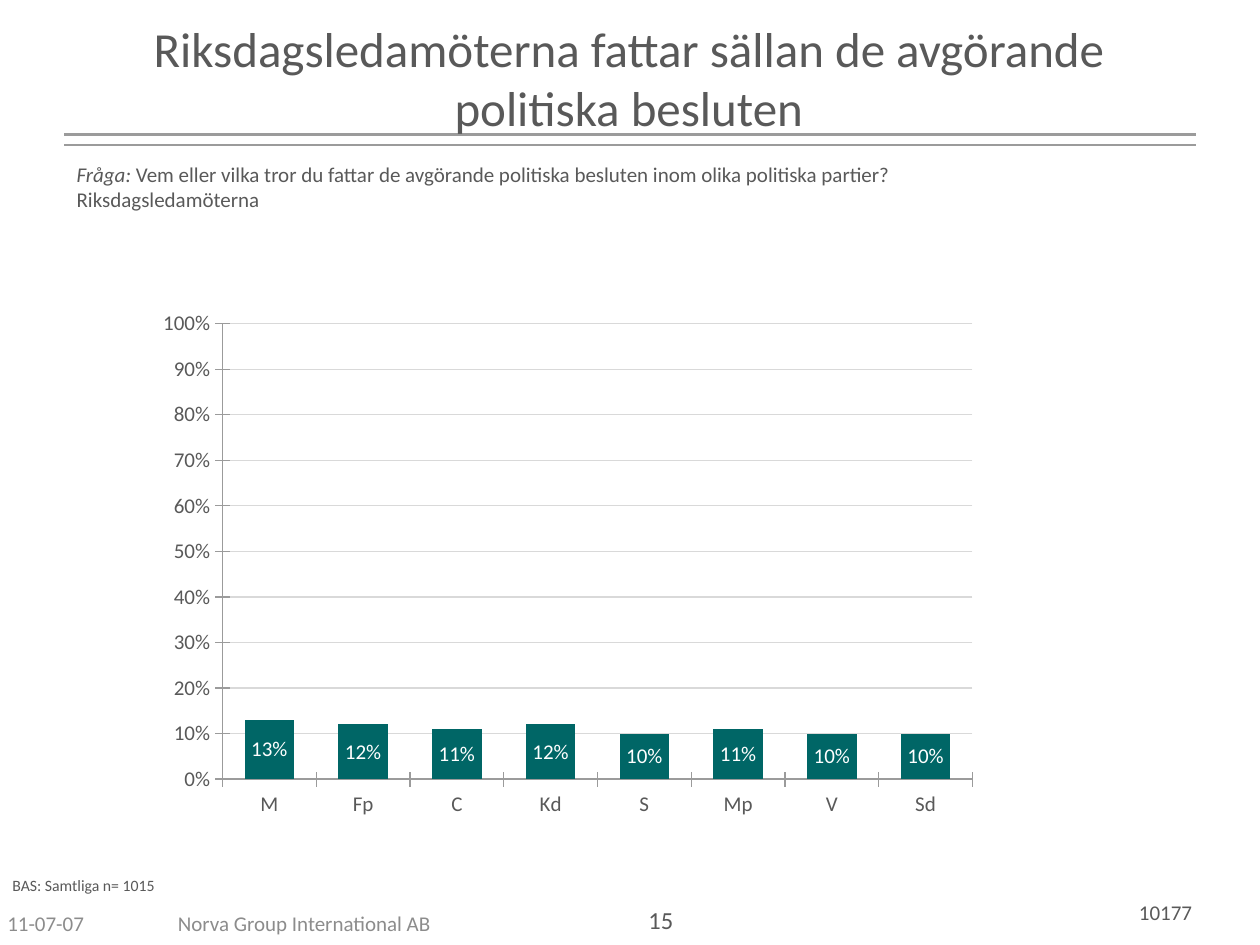
from lxml import etree
from pptx import Presentation
from pptx.chart.data import CategoryChartData
from pptx.dml.color import RGBColor
from pptx.enum.chart import XL_CHART_TYPE, XL_LABEL_POSITION, XL_TICK_MARK
from pptx.enum.shapes import MSO_CONNECTOR
from pptx.enum.text import MSO_ANCHOR, PP_ALIGN
from pptx.oxml.ns import qn
from pptx.util import Inches, Pt

STACKED = XL_CHART_TYPE.COLUMN_STACKED
LABEL_CENTER = XL_LABEL_POSITION.CENTER
TICK_CROSS = XL_TICK_MARK.CROSS
STRAIGHT = MSO_CONNECTOR.STRAIGHT
TOP, MIDDLE = MSO_ANCHOR.TOP, MSO_ANCHOR.MIDDLE
LEFT, CENTER, RIGHT = PP_ALIGN.LEFT, PP_ALIGN.CENTER, PP_ALIGN.RIGHT

FONT = "Calibri"
COLORS = {
    "text": "595959",
    "footer": "8C8C8C",
    "rule": "9B9B9B",
    "grid": "D9D9D9",
    "bar": "006666",
    "label": "FFFFFF",
}
PARTIES = ["M", "Fp", "C", "Kd", "S", "Mp", "V", "Sd"]
SHARES = [0.13, 0.12, 0.11, 0.12, 0.1, 0.11, 0.1, 0.1]
PLOT_LAYOUT = {"x": 0.071, "y": 0.143, "w": 0.774, "h": 0.729}


def rgb(name):
    return RGBColor.from_string(COLORS[name])


def style_font(font, size, color="text"):
    font.name = FONT
    font.size = Pt(size)
    font.color.rgb = rgb(color)


def add_text(slide, box, paragraphs, size, color="text", align=LEFT, anchor=TOP):
    tf = slide.shapes.add_textbox(*map(Inches, box)).text_frame
    tf.word_wrap = True
    tf.vertical_anchor = anchor
    for i, runs in enumerate(paragraphs):
        p = tf.add_paragraph() if i else tf.paragraphs[0]
        p.alignment = align
        for text, italic in runs:
            r = p.add_run()
            r.text = text
            style_font(r.font, size, color)
            r.font.italic = italic


def add_double_rule(slide, box):
    left, top, width, height = box
    for y in (top, top + height):
        line = slide.shapes.add_connector(
            STRAIGHT, Inches(left), Inches(y), Inches(left + width), Inches(y))
        line.line.color.rgb = rgb("rule")
        line.line.width = Pt(1.5)
        etree.SubElement(line._element.spPr, qn("a:effectLst"))


def add_header(slide, box):
    left, top, width, height = box
    title = "Riksdagsledamöterna fattar sällan de avgörande politiska besluten"
    add_text(slide, (left, top, width, 1.25), [[(title, False)]], 28, align=CENTER)
    question = [
        [("Fråga: ", True),
         ("Vem eller vilka tror du fattar de avgörande politiska besluten "
          "inom olika politiska partier?", False)],
        [("Riksdagsledamöterna", False)],
    ]
    add_text(slide, (left + 0.02, top + height - 0.5, width - 0.02, 0.5), question, 12)


def set_plot_layout(chart):
    plot_area = chart._chartSpace.chart.plotArea
    for old in plot_area.findall(qn("c:layout")):
        plot_area.remove(old)
    layout = etree.Element(qn("c:layout"))
    manual = etree.SubElement(layout, qn("c:manualLayout"))
    settings = {"layoutTarget": "inner", "xMode": "edge", "yMode": "edge", **PLOT_LAYOUT}
    for tag, value in settings.items():
        etree.SubElement(manual, qn(f"c:{tag}")).set("val", str(value))
    plot_area.insert(0, layout)


def add_party_chart(slide, box):
    data = CategoryChartData(number_format="0%")
    data.categories = PARTIES
    data.add_series("Series 1", SHARES)
    chart = slide.shapes.add_chart(STACKED, *map(Inches, box), data).chart
    chart.has_title = False
    chart.has_legend = False
    style_font(chart.font, 18)
    set_plot_layout(chart)

    for axis in (chart.category_axis, chart.value_axis):
        axis.major_tick_mark = TICK_CROSS
        style_font(axis.tick_labels.font, 12)
        axis.format.line.color.rgb = rgb("rule")
    axis = chart.value_axis
    axis.minimum_scale, axis.maximum_scale, axis.major_unit = 0, 1, 0.1
    axis.tick_labels.number_format = "0%"
    axis.tick_labels.number_format_is_linked = False
    axis.major_gridlines.format.line.color.rgb = rgb("grid")
    axis.major_gridlines.format.line.width = Pt(0.75)

    plot = chart.plots[0]
    plot.gap_width, plot.overlap = 89, 100
    plot.vary_by_categories = False
    series = plot.series[0]
    series.format.fill.solid()
    series.format.fill.fore_color.rgb = rgb("bar")
    labels = series.data_labels
    labels.show_value = True
    labels.position = LABEL_CENTER
    labels.number_format = "0%"
    labels.number_format_is_linked = False
    style_font(labels.font, 12, "label")


def add_footer(slide, box):
    left, top, width, height = box
    row = top + 0.23
    right = left + width
    items = [
        ((left, top, 3.39, 0.25), "BAS: Samtliga n= 1015", 9, "text", LEFT, TOP),
        ((left - 0.04, row, 2.33, 0.4), "11-07-07", 12, "footer", LEFT, MIDDLE),
        ((left + 0.83, row, 3.17, 0.4), "Norva Group International AB",
         12, "footer", CENTER, MIDDLE),
        ((left + 4.08, row, 2.33, 0.4), "15", 14, "text", CENTER, TOP),
        ((right - 3.04, row - 0.04, 2.6, 0.3), "10177", 12, "text", RIGHT, TOP),
    ]
    for area, text, size, color, align, anchor in items:
        add_text(slide, area, [[(text, False)]], size, color, align, anchor)


def main():
    prs = Presentation()
    prs.slide_width, prs.slide_height = Inches(10), Inches(7.5)
    slide = prs.slides.add_slide(prs.slide_layouts[6])
    add_double_rule(slide, (0.51, 1.07, 8.98, 0.08))
    add_party_chart(slide, (1.22, 1.86, 7.69, 4.96))
    add_header(slide, (0.49, 0.1, 9, 1.63))
    add_footer(slide, (0, 6.9, 10, 0.6))
    prs.save("out.pptx")


if __name__ == "__main__":
    main()
